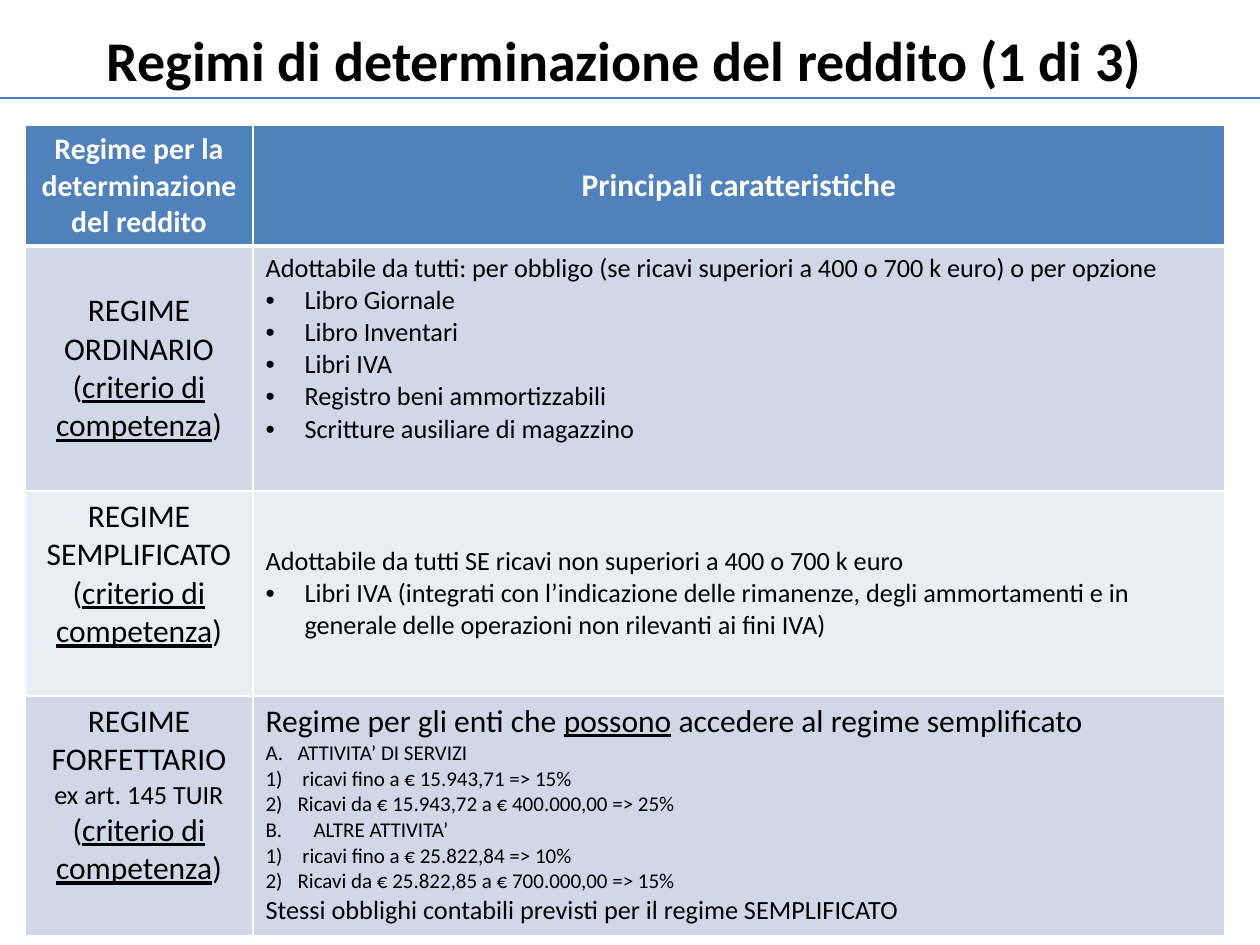
import dataclasses
import pptx
import pptx.util
import pptx.dml.color
import pptx.enum.text
import pptx.enum.shapes
import pptx.oxml
import pptx.oxml.ns
import lxml.etree


@dataclasses.dataclass
class Theme:
    font: str = "Calibri"
    black: str = "000000"
    white: str = "FFFFFF"
    head: str = "4F81BD"
    dark: str = "D0D8E8"
    light: str = "E9EDF4"
    rule: str = "4B7EBC"
    title: int = 32
    big: int = 18
    label: int = 17
    mid: int = 15
    small: int = 12


theme = Theme()
rgb = pptx.dml.color.RGBColor.from_string
qn = pptx.oxml.ns.qn
Align = pptx.enum.text.PP_ALIGN
Anchor = pptx.enum.text.MSO_ANCHOR
scale = 914400 / 126


def px(n):
    return pptx.util.Emu(round(n * scale))


def write(frame, text, size=theme.mid, color=theme.black, bold=False,
          align=Align.LEFT, odd=None, mark=None, start=1, indent=0):
    par = frame.paragraphs[0]
    if par.runs:
        par = frame.add_paragraph()
    par.alignment = align
    for i, part in enumerate(text.split("_")):
        if not part:
            continue
        run = par.add_run()
        run.text = part
        font = run.font
        font.name = theme.font
        font.size = pptx.util.Pt(odd if odd and i % 2 else size)
        font.bold = bold
        font.underline = i % 2 == 1 and not odd
        font.color.rgb = rgb(color)
    if mark:
        prop = par._p.get_or_add_pPr()
        prop.set("marL", str(px(indent)))
        prop.set("indent", str(-px(indent)))
        if mark == "•":
            lxml.etree.SubElement(prop, qn("a:buFont"), typeface="Arial")
            lxml.etree.SubElement(prop, qn("a:buChar"), char=mark)
        else:
            auto = lxml.etree.SubElement(prop, qn("a:buAutoNum"), type=mark)
            if start > 1:
                auto.set("startAt", str(start))


deck = pptx.Presentation()
deck.slide_width, deck.slide_height = px(1260), px(945)
slide = deck.slides.add_slide(deck.slide_layouts[5])

title = slide.shapes.title
title.left, title.top, title.width, title.height = px(94), px(19), px(1099), px(81)
frame = title.text_frame
frame.word_wrap = False
frame.auto_size = pptx.enum.text.MSO_AUTO_SIZE.SHAPE_TO_FIT_TEXT
frame.vertical_anchor = Anchor.TOP
write(frame, "Regimi di determinazione del reddito (1 di 3)",
      size=theme.title, bold=True)

rule = slide.shapes.add_connector(
    pptx.enum.shapes.MSO_CONNECTOR.STRAIGHT, 0, px(98), px(1260), px(98))
rule.line.color.rgb = rgb(theme.rule)
rule.line.width = pptx.util.Pt(1.5)
lxml.etree.SubElement(rule._element.spPr, qn("a:effectLst"))

name = dict(size=theme.big, align=Align.CENTER)
head = dict(name, color=theme.white, bold=True)
dot = dict(mark="•", indent=39)
alpha = dict(size=theme.small, mark="alphaUcPeriod", indent=32)
num = dict(alpha, mark="arabicParenR")
basis = ("(_criterio di competenza_)", name)

rows = [
    (121, theme.head, [
        (Anchor.MIDDLE, [("Regime per la determinazione del reddito",
                          dict(head, size=theme.label))]),
        (Anchor.MIDDLE, [("Principali caratteristiche", head)]),
    ]),
    (245, theme.dark, [
        (Anchor.MIDDLE, [("REGIME ORDINARIO", name), basis]),
        (Anchor.TOP, [
            ("Adottabile da tutti: per obbligo (se ricavi superiori a 400 o 700 k euro) o per opzione", {}),
            ("Libro Giornale", dot),
            ("Libro Inventari", dot),
            ("Libri IVA", dot),
            ("Registro beni ammortizzabili", dot),
            ("Scritture ausiliare di magazzino", dot),
        ]),
    ]),
    (205, theme.light, [
        (Anchor.TOP, [("REGIME SEMPLIFICATO", name), basis]),
        (Anchor.MIDDLE, [
            ("Adottabile da tutti SE ricavi non superiori a 400 o 700 k euro", {}),
            ("Libri IVA (integrati con l’indicazione delle rimanenze, degli ammortamenti e in "
             "generale delle operazioni non rilevanti ai fini IVA)", dot),
        ]),
    ]),
    (240, theme.dark, [
        (Anchor.TOP, [("REGIME FORFETTARIO _ex art. 145 TUIR",
                       dict(name, odd=theme.mid)), basis]),
        (Anchor.TOP, [
            ("Regime per gli enti che _possono_ accedere al regime semplificato",
             dict(size=theme.big)),
            ("ATTIVITA’ DI SERVIZI", alpha),
            (" ricavi fino a € 15.943,71 => 15%", num),
            ("Ricavi da € 15.943,72 a € 400.000,00 => 25%", num),
            ("ALTRE ATTIVITA’", dict(alpha, start=2, indent=48)),
            (" ricavi fino a € 25.822,84 => 10%", num),
            ("Ricavi da € 25.822,85 a € 700.000,00 => 15%", num),
            ("Stessi obblighi contabili previsti per il regime SEMPLIFICATO", {}),
        ]),
    ]),
]

cols = [228, 972]
table = slide.shapes.add_table(
    len(rows), len(cols), px(25), px(125), px(sum(cols)),
    px(sum(row[0] for row in rows))).table
for col, width in zip(table.columns, cols):
    col.width = px(width)

for r, (height, fill, cells) in enumerate(rows):
    table.rows[r].height = px(height)
    for c, (anchor, lines) in enumerate(cells):
        cell = table.cell(r, c)
        cell.vertical_anchor = anchor
        for text, form in lines:
            write(cell.text_frame, text, **form)
        prop = cell._tc.get_or_add_tcPr()
        for side in "LRTB":
            thick = (r, side) in [(0, "B"), (1, "T")]
            edge = lxml.etree.SubElement(
                prop, qn("a:ln" + side), w=str(pptx.util.Pt(3 if thick else 1)))
            paint = lxml.etree.SubElement(edge, qn("a:solidFill"))
            lxml.etree.SubElement(paint, qn("a:srgbClr"), val=theme.white)
        cell.fill.solid()
        cell.fill.fore_color.rgb = rgb(fill)

deck.save("out.pptx")
